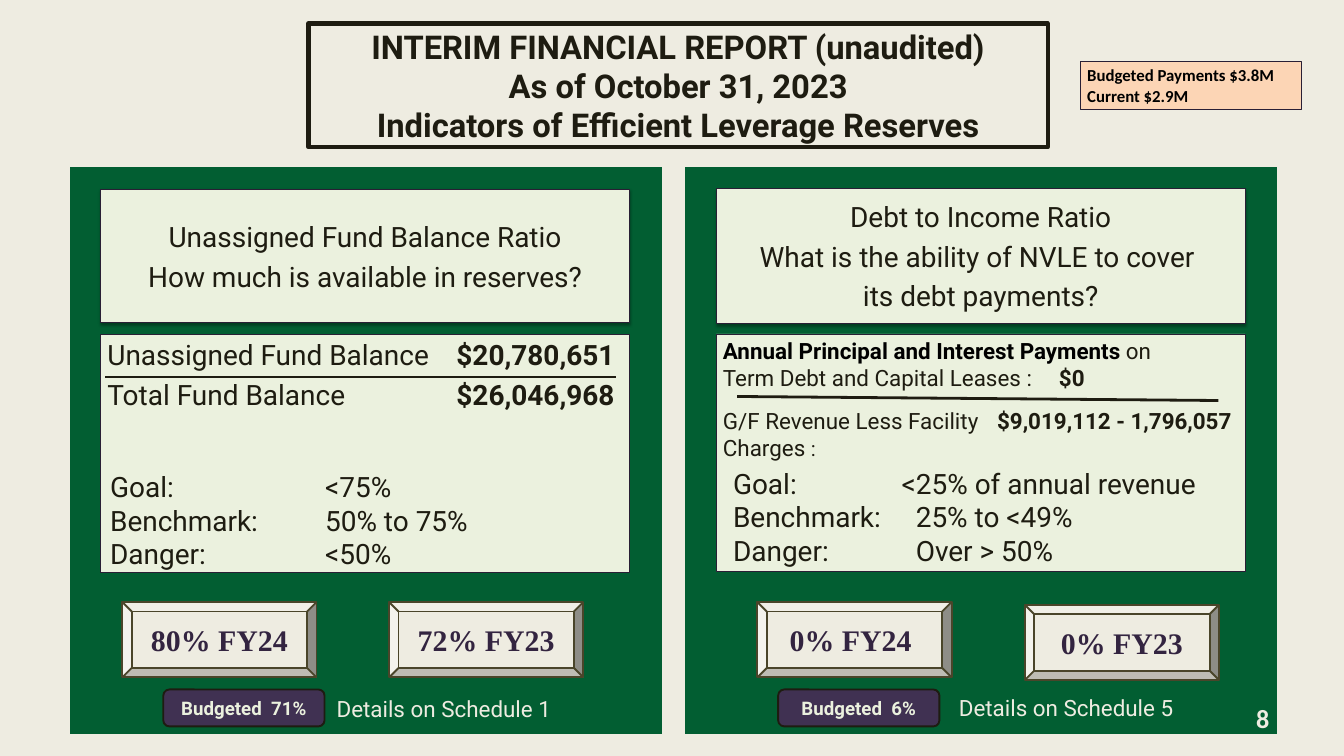
from lxml.etree import SubElement
from pptx import Presentation
from pptx.dml.color import RGBColor
from pptx.enum.shapes import MSO_CONNECTOR, MSO_SHAPE
from pptx.enum.text import MSO_ANCHOR, MSO_AUTO_SIZE, PP_ALIGN
from pptx.oxml.ns import qn
from pptx.util import Inches, Pt

INK = "1E1C11"
BLACK = "000000"
CREAM = "EEECE1"
PALE = "EBF1DE"
EDGE = "291F35"
BOLD = {"bold": True}
BODY = {"size": Pt(30), "name": "Roboto", "bold": False}
TITLE = {**BODY, "size": Pt(35.1), "bold": True}
SMALL = {**BODY, "size": Pt(24)}
BADGE = {**BODY, "size": Pt(20), "bold": True}
SCORE = {"size": Pt(32), "name": "Times New Roman", "bold": True}
NOTE = {"size": Pt(18), "name": "Calibri", "bold": True}
PAGE = {**NOTE, "size": Pt(28)}
GROW = {"auto_size": MSO_AUTO_SIZE.SHAPE_TO_FIT_TEXT}
FLUSH = dict.fromkeys(("margin_left", "margin_top", "margin_right", "margin_bottom"), 0)
MIDDLE = {"vertical_anchor": MSO_ANCHOR.MIDDLE}
CENTER = {"alignment": PP_ALIGN.CENTER}
LEFT = {"alignment": PP_ALIGN.LEFT}


def tint(code):
    """Turn a hex string into a colour."""
    return RGBColor.from_string(code)


def apply(target, values):
    """Set each format value on the target."""
    for key, value in values.items():
        setattr(target, key, value)


def add_tab(para, place, align="l"):
    """Give a paragraph one tab stop, in inches."""
    stops = SubElement(para._p.get_or_add_pPr(), qn("a:tabLst"))
    SubElement(stops, qn("a:tab"), pos=str(Inches(place)), algn=align)


def write(shape, lines, font, color=INK, frame=None, para=LEFT):
    """Fill a shape with paragraphs of plain text or (text, format, colour) runs."""
    text = shape.text_frame
    apply(text, {"word_wrap": True, "vertical_anchor": MSO_ANCHOR.TOP, **(frame or {})})
    for index, line in enumerate(lines):
        item = text.add_paragraph() if index else text.paragraphs[0]
        apply(item, para)
        for words, extra, *shade in [(line, {})] if isinstance(line, str) else line:
            for part, piece in enumerate(words.split("\n")):
                if part:
                    item.add_line_break()
                run = item.add_run()
                run.text = piece
                apply(run.font, {**font, **extra})
                run.font.color.rgb = tint(shade[0] if shade else color)
    return text.paragraphs


def add_box(slide, place, fill, line, width, kind=MSO_SHAPE.RECTANGLE):
    """Draw a preset shape with an outline and an optional fill."""
    shape = slide.shapes.add_shape(kind, *map(Inches, place))
    shape.shadow.inherit = False
    if fill:
        shape.fill.solid()
        shape.fill.fore_color.rgb = tint(fill)
    else:
        shape.fill.background()
    shape.line.color.rgb = tint(line)
    shape.line.width = Pt(width)
    return shape


def add_label(slide, place, lines, font, color=INK, frame=GROW, para=LEFT):
    """Place a text box and return its paragraphs."""
    box = slide.shapes.add_textbox(*map(Inches, place))
    return write(box, lines, font, color, frame, para)


def add_panel(slide, left):
    """Draw a green backing panel."""
    right, top, low = left + 8.81, 2.48, 10.93
    path = slide.shapes.build_freeform(Inches(right), Inches(low), 1.0)
    corners = [(left, low), (left, top), (right, top)]
    path.add_line_segments([(Inches(x), Inches(y)) for x, y in corners], close=True)
    panel = path.convert_to_shape()
    panel.shadow.inherit = False
    panel.fill.solid()
    panel.fill.fore_color.rgb = tint("025E32")
    panel.line.fill.background()


def add_head(slide, place, lines):
    """Draw a heading card with a soft shadow."""
    card = add_box(slide, place, PALE, EDGE, 0.75)
    effects = card._element.spPr.find(qn("a:effectLst"))
    shade = SubElement(effects, qn("a:outerShdw"), blurRad=str(Pt(3.1)),
                       dist=str(Pt(1.8)), dir="5400000", rotWithShape="0")
    black = SubElement(shade, qn("a:srgbClr"), val=BLACK)
    SubElement(black, qn("a:alpha"), val="35000")
    write(card, lines, BODY, frame=MIDDLE, para={**CENTER, "space_before": Pt(6.5)})


def add_rule(slide, *ends):
    """Draw a fraction bar between two points."""
    rule = slide.shapes.add_connector(MSO_CONNECTOR.STRAIGHT, *map(Inches, ends))
    rule.line.color.rgb = tint(INK)
    rule.line.width = Pt(3)
    SubElement(rule._element.spPr, qn("a:effectLst"))


def add_funds(slide):
    """Write the fund balance ratio and its goals."""
    card = add_box(slide, (1.5, 4.98, 7.87, 3.54), PALE, EDGE, 0.75)
    rows = [("Unassigned Fund Balance", "$20,780,651"), ("Total Fund Balance", "$26,046,968")]
    lines = [[(name + "\t", {}), (total, BOLD)] for name, total in rows]
    for para in write(card, lines, BODY, para={**LEFT, "space_before": Pt(6)}):
        add_tab(para, 7.55, "r")
    add_rule(slide, 1.57, 5.61, 9.16, 5.61)
    goals = ["Goal:\t<75%", "Benchmark:\t50% to 75%", "Danger:\t<50%"]
    for para in add_label(slide, (1.54, 6.94, 7.87, 1.62), goals, BODY):
        add_tab(para, 3.2)


def add_debt(slide):
    """Write the debt ratio and its goals."""
    card = add_box(slide, (10.66, 4.97, 7.87, 3.54), PALE, EDGE, 0.75)
    paras = write(card, [
        [("Annual Principal and Interest Payments ", BOLD, BLACK), ("on", {})],
        [("Term Debt and Capital Leases :\t", {}), ("$0", BOLD)],
        [("G/F Revenue Less Facility\t", {}), ("$9,019,112 - 1,796,057", BOLD)],
        [("Charges ", {}), (":", {"size": Pt(22)})],
    ], SMALL)
    paras[2].space_before = Pt(17)
    add_tab(paras[1], 5)
    add_tab(paras[2], 4.08)
    add_rule(slide, 10.97, 5.9, 18.13, 5.96)
    goals = ["Goal:\t<25% of annual revenue", "Benchmark:\t25% to <49%", "Danger:\tOver > 50%"]
    paras = add_label(slide, (10.81, 6.89, 7.5, 1.62), goals, BODY)
    for para, stop in zip(paras, (2.51, 2.72, 2.72)):
        add_tab(para, stop)


def main():
    """Build the slide and save it."""
    deck = Presentation()
    deck.slide_width, deck.slide_height = Inches(20), Inches(11.25)
    slide = deck.slides.add_slide(deck.slide_layouts[6])
    slide.background.fill.solid()
    slide.background.fill.fore_color.rgb = tint(CREAM)
    for left in (1.04, 10.19):
        add_panel(slide, left)
    title = add_box(slide, (4.59, 0.35, 11, 1.84), None, INK, 4.5)
    write(title, ["INTERIM FINANCIAL REPORT (unaudited)\nAs of October 31, 2023\n"
                  "Indicators of Efficient Leverage Reserves"],
          TITLE, frame={**MIDDLE, **FLUSH}, para=CENTER)
    add_head(slide, (1.5, 2.82, 7.87, 1.98),
             ["Unassigned Fund Balance Ratio", "How much is available in reserves?"])
    add_head(slide, (10.66, 2.81, 7.87, 2),
             ["Debt to Income Ratio", "What is the ability of NVLE to cover ", "its debt payments?"])
    add_funds(slide)
    add_debt(slide)
    scores = [(1.82, 8.96, "80% FY24"), (5.79, 8.96, "72% FY23"),
              (11.27, 8.96, "0% FY24 "), (15.25, 9, "0% FY23")]
    for left, top, words in scores:
        bevel = add_box(slide, (left, top, 2.89, 1.12), CREAM, "4A452A", 2, MSO_SHAPE.BEVEL)
        write(bevel, [words], SCORE, "332440", MIDDLE, CENTER)
    for left, words in ((2.43, "Budgeted  71%"), (11.58, "Budgeted  6%")):
        badge = add_box(slide, (left, 10.26, 2.4, 0.55), "403152", INK, 2,
                        MSO_SHAPE.ROUNDED_RECTANGLE)
        write(badge, [words], BADGE, PALE, MIDDLE, CENTER)
    add_label(slide, (4.91, 10.3, 3.48, 0.5), ["Details on Schedule 1"], SMALL, CREAM)
    add_label(slide, (14.17, 10.28, 3.83, 0.5), ["Details on Schedule 5"], SMALL, CREAM)
    add_label(slide, (18.47, 10.45, 0.42, 0.47), ["8"], PAGE, CREAM,
              {**GROW, **FLUSH}, {"alignment": PP_ALIGN.RIGHT})
    note = add_box(slide, (16.08, 0.92, 3.29, 0.71), "FCD5B5", EDGE, 0.75)
    write(note, ["Budgeted Payments $3.8M", "Current $2.9M"], NOTE, BLACK, GROW)
    deck.save("out.pptx")


if __name__ == "__main__":
    main()
